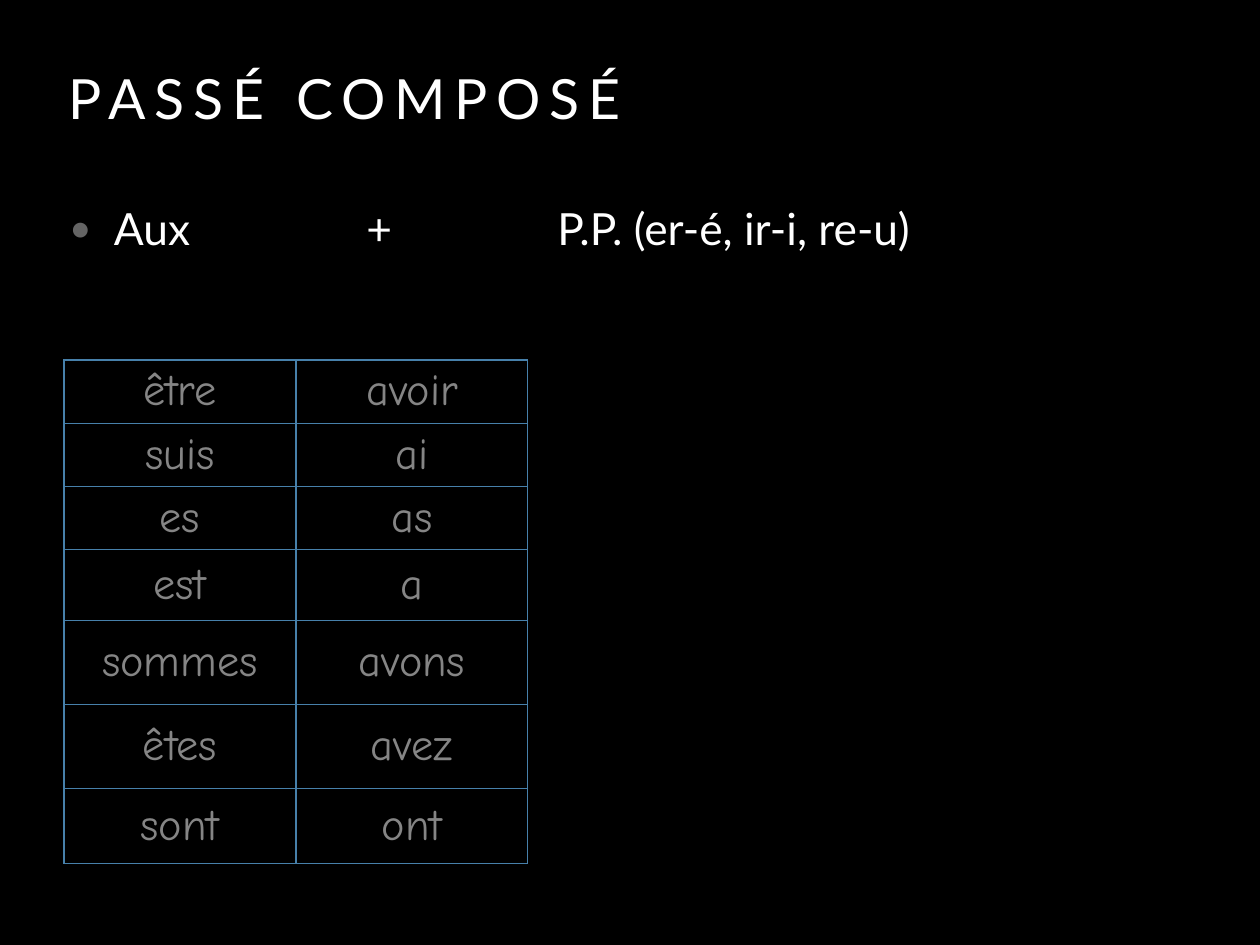
from lxml import etree
from pptx import Presentation
from pptx.dml.color import RGBColor
from pptx.enum.text import MSO_ANCHOR, MSO_AUTO_SIZE, PP_ALIGN
from pptx.oxml.ns import qn
from pptx.util import Pt

TOP, MIDDLE = MSO_ANCHOR.TOP, MSO_ANCHOR.MIDDLE
LEFT, CENTER = PP_ALIGN.LEFT, PP_ALIGN.CENTER
NO_FIT = MSO_AUTO_SIZE.NONE
BLACK = RGBColor(0x00, 0x00, 0x00)
WHITE = RGBColor(0xFF, 0xFF, 0xFF)
BULLET_GREY = RGBColor(0x64, 0x64, 0x64)
VERB_GREY = RGBColor(0x85, 0x85, 0x85)
BORDER_BLUE = RGBColor(0x47, 0x80, 0xAA)
PX = 10320
INSET = 5 * PX
TITLE_ONLY = 5


def set_up_frame(frame, anchor):
    frame.margin_left = frame.margin_right = INSET
    frame.margin_top = frame.margin_bottom = INSET
    frame.vertical_anchor = anchor


def style_span(span, face, size, color):
    span.font.name = face
    span.font.size = Pt(size)
    span.font.color.rgb = color


deck = Presentation()
deck.slide_width, deck.slide_height = 1260 * PX, 945 * PX
page = deck.slides.add_slide(deck.slide_layouts[TITLE_ONLY])
page.background.fill.solid()
page.background.fill.fore_color.rgb = BLACK

title = page.shapes.title
title.left, title.top, title.width, title.height = 64 * PX, 59 * PX, 1132 * PX, 138 * PX
set_up_frame(title.text_frame, TOP)
title.text_frame.auto_size = NO_FIT
title.text_frame.text = "PASSÉ COMPOSÉ"
para = title.text_frame.paragraphs[0]
para.alignment = LEFT
style_span(para.runs[0], "Lato", 45, WHITE)
para.runs[0].font._element.set("spc", "720")

formula = page.shapes.add_textbox(64 * PX, 196 * PX, 1132 * PX, 651 * PX)
set_up_frame(formula.text_frame, TOP)
formula.text_frame.word_wrap = True
para = formula.text_frame.paragraphs[0]
FORMULA_PARTS = [("Aux", 0), (" ", 134), ("+", 0), (" ", 125), ("P.P. (er-é, ir-i, re-u)", 0)]
for text, spacing in FORMULA_PARTS:
    span = para.add_run()
    span.text = text
    style_span(span, "Lato", 36, WHITE)
    if spacing:
        span.font._element.set("spc", str(spacing * 100))

settings = para._p.get_or_add_pPr()
settings.set("marL", str(45 * PX))
settings.set("indent", str(-45 * PX))
bullet_color = etree.SubElement(settings, qn("a:buClr"))
etree.SubElement(bullet_color, qn("a:srgbClr"), val=str(BULLET_GREY))
etree.SubElement(settings, qn("a:buSzPct"), val="90000")
etree.SubElement(settings, qn("a:buFont"), typeface="Lato")
etree.SubElement(settings, qn("a:buChar"), char="•")

VERBS = [
    ("être", "avoir"),
    ("suis", "ai"),
    ("es", "as"),
    ("est", "a"),
    ("sommes", "avons"),
    ("êtes", "avez"),
    ("sont", "ont"),
]
ROW_HEIGHTS = [63, 61, 61, 71, 84, 84, 75]
frame = page.shapes.add_table(len(VERBS), 2, 64 * PX, 360 * PX, 464 * PX, sum(ROW_HEIGHTS) * PX)
table = frame.table
table.first_row = False
table.horz_banding = False
for column in table.columns:
    column.width = 232 * PX

for row, height, forms in zip(table.rows, ROW_HEIGHTS, VERBS):
    row.height = height * PX
    for cell, form in zip(row.cells, forms):
        set_up_frame(cell, MIDDLE)
        cell.text_frame.text = form
        para = cell.text_frame.paragraphs[0]
        para.alignment = CENTER
        style_span(para.runs[0], "Comic Neue", 36, VERB_GREY)
        cell.fill.background()
        cell_settings = cell._tc.get_or_add_tcPr()
        for place, side in enumerate(["a:lnL", "a:lnR", "a:lnT", "a:lnB"]):
            border = etree.Element(qn(side), w=str(Pt(1)))
            border_fill = etree.SubElement(border, qn("a:solidFill"))
            etree.SubElement(border_fill, qn("a:srgbClr"), val=str(BORDER_BLUE))
            cell_settings.insert(place, border)

deck.save("out.pptx")
